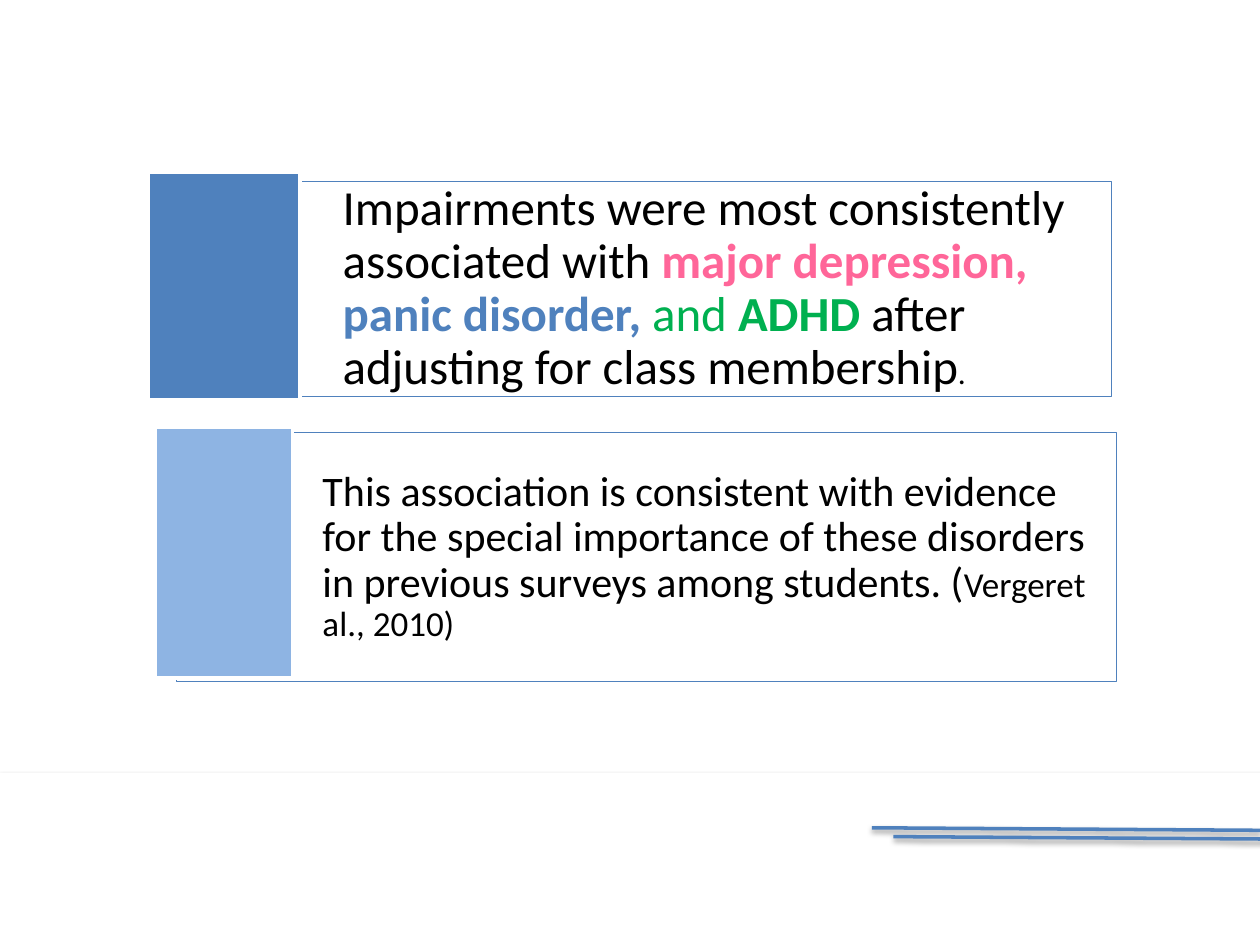
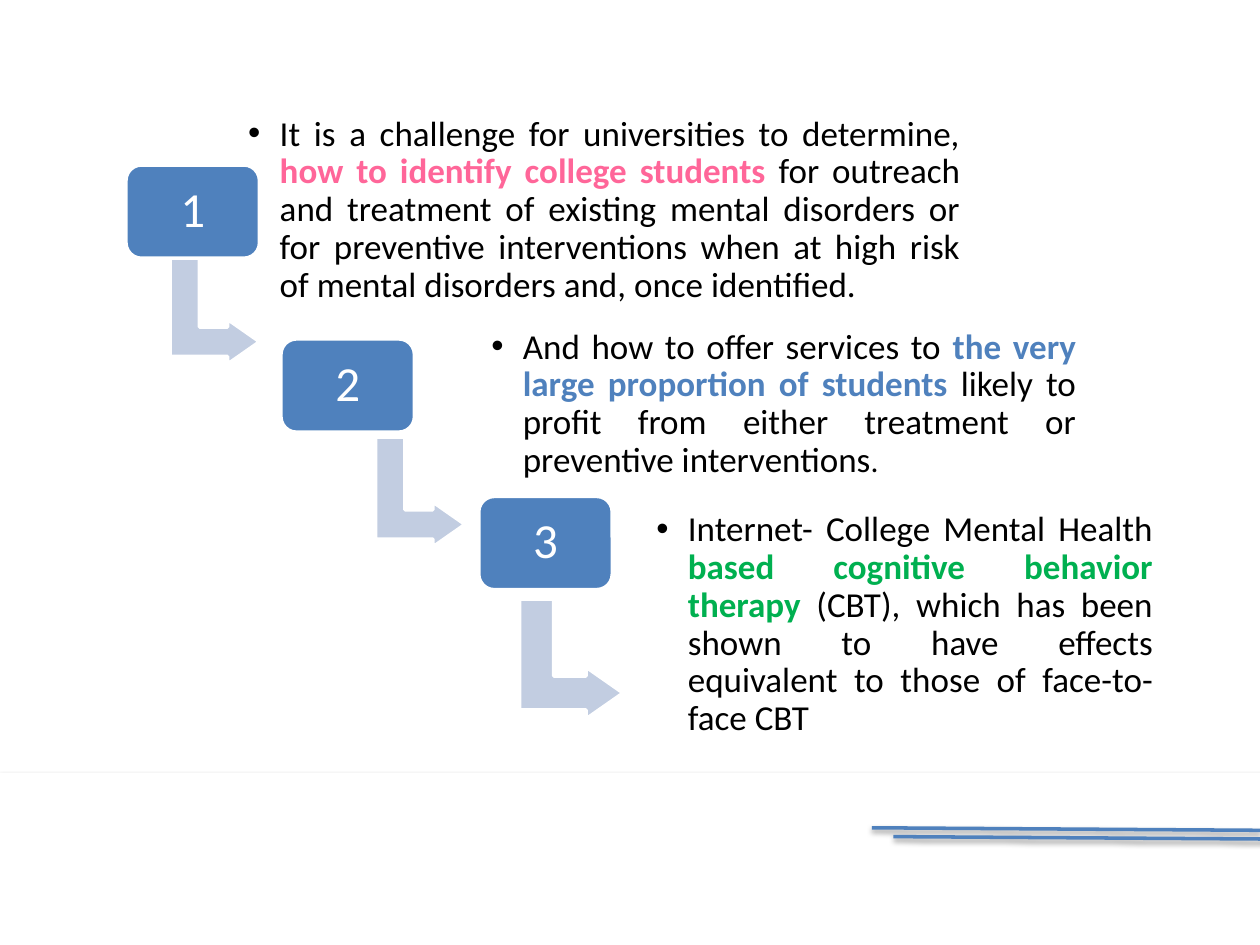
from lxml import etree
from pptx import Presentation
from pptx.dml.color import RGBColor
from pptx.enum.shapes import MSO_CONNECTOR, MSO_SHAPE
from pptx.enum.text import MSO_ANCHOR, PP_ALIGN
from pptx.oxml.ns import qn
from pptx.util import Inches, Pt

RECT, ROUND, BENT = MSO_SHAPE.RECTANGLE, MSO_SHAPE.ROUNDED_RECTANGLE, MSO_SHAPE.BENT_UP_ARROW
LINE, MIDDLE = MSO_CONNECTOR.STRAIGHT, MSO_ANCHOR.MIDDLE
LEFT, CENTER, JUSTIFY = PP_ALIGN.LEFT, PP_ALIGN.CENTER, PP_ALIGN.JUSTIFY

THEME = dict(
    font="Calibri", white="FFFFFF", black="000000", blue="4F81BD", sky="8EB4E3",
    pale="C2CDE1", pink="FF6699", green="00B050",
    large=28, medium=24, body=20, small=18, edge=2, hairline=0.75,
)

prs = Presentation()
prs.slide_width, prs.slide_height = Inches(10), Inches(7.5)
COL, ROW = prs.slide_width / 100, prs.slide_height / 75


def add_block(s, kind, box, fill, line="white", width="edge"):
    x, y, w, h = box
    sp = s.shapes.add_shape(kind, int(x * COL), int(y * ROW), int(w * COL), int(h * ROW))
    sp.shadow.inherit = False
    sp.fill.solid()
    sp.fill.fore_color.rgb = RGBColor.from_string(THEME[fill])
    sp.line.color.rgb = RGBColor.from_string(THEME[line])
    sp.line.width = Pt(THEME[width])
    return sp


def write(sp, runs, align, inset, left=None):
    tf = sp.text_frame
    margins = dict.fromkeys(("margin_left", "margin_top", "margin_right", "margin_bottom"), Inches(inset))
    if left:
        margins["margin_left"] = Inches(left)
    for name, value in {**margins, "word_wrap": True, "vertical_anchor": MIDDLE}.items():
        setattr(tf, name, value)
    p = tf.paragraphs[0]
    p.alignment, p.line_spacing = align, 0.9
    for text, size, color, bold in runs:
        r = p.add_run()
        r.text = text
        for name, value in dict(name=THEME["font"], size=Pt(THEME[size]), bold=bold).items():
            setattr(r.font, name, value)
        r.font.color.rgb = RGBColor.from_string(THEME[color])
    return p


slides = [prs.slides.add_slide(prs.slide_layouts[6]) for _ in range(2)]

for s in slides:
    footer = add_block(s, RECT, (0, 61.4, 100, 13.6), "white", width="hairline")
    decorations = [(footer, 35, 1.8)]
    for x, y in ((69.2, 65.7), (70.9, 66.4)):
        rule = s.shapes.add_connector(LINE, int(x * COL), int(y * ROW), int((x + 30.8) * COL), int((y + 0.2) * ROW))
        rule.line.color.rgb = RGBColor.from_string(THEME["blue"])
        rule.line.width = Pt(THEME["edge"])
        etree.SubElement(rule._element.spPr, qn("a:effectLst"))
        decorations.append((rule, 38, 1.6))
    for sp, opacity, distance in decorations:
        effects = sp._element.spPr.find(qn("a:effectLst"))
        shadow = etree.SubElement(effects, qn("a:outerShdw"), blurRad=str(Pt(3.1)),
                                  dist=str(Pt(distance)), dir="5400000", rotWithShape="0")
        color = etree.SubElement(shadow, qn("a:srgbClr"), val=THEME["black"])
        etree.SubElement(color, qn("a:alpha"), val=str(opacity * 1000))

findings = [
    ((15.6, 14.4, 72.6, 17.1), (11.8, 13.7, 12, 18), "blue", 0.12, [
        ("Impairments were most consistently associated with ", "large", "black", False),
        ("major depression, ", "large", "pink", True),
        ("panic disorder, ", "large", "blue", True),
        ("and ", "large", "green", False),
        ("ADHD ", "large", "green", True),
        ("after adjusting for class membership", "large", "black", False),
        (".", "small", "black", False),
    ]),
    ((14, 34.3, 74.6, 19.8), (12.3, 33.9, 10.9, 19.9), "sky", 0.1, [
        ("This association is consistent with evidence for the special importance of these "
         "disorders in previous surveys among students. (", "medium", "black", False),
        ("Vergeret al., 2010)", "body", "black", False),
    ]),
]
for card_box, tab_box, tab_color, inset, runs in findings:
    card = add_block(slides[0], RECT, card_box, "white", "blue", "hairline")
    write(card, runs, LEFT, inset, left=1.16)
    add_block(slides[0], RECT, tab_box, tab_color)

steps = [
    ((10, 13.1), (12.7, 21, 8.7, 7.1), (18.9, 9.8, 58.1, 13.8), [
        ("It is a challenge for universities to determine, ", "body", "black", False),
        ("how to identify college students ", "body", "pink", True),
        ("for outreach and treatment of existing mental disorders or for preventive "
         "interventions when at high risk of mental disorders and, once identified. ", "body", "black", False),
    ]),
    ((22.3, 26.9), (29, 35.5, 8.7, 7.1), (38.2, 26.4, 48, 11.4), [
        ("And how to offer services to ", "body", "black", False),
        ("the very large proportion of students ", "body", "blue", True),
        ("likely to profit from either treatment or preventive interventions", "body", "black", False),
        (". ", "small", "black", False),
    ]),
    ((38, 39.4), (40.6, 48.2, 9.5, 8.2), (51.3, 41.6, 41, 16), [
        ("Internet- College Mental Health ", "body", "black", False),
        ("based cognitive behavior therapy ", "body", "green", True),
        ("(CBT), which has been shown to have effects equivalent to those of "
         "face-to-face CBT", "body", "black", False),
    ]),
]
s = slides[1]
for number, (corner, arrow_box, text_box, runs) in enumerate(steps, 1):
    arrow = add_block(s, BENT, arrow_box, "pale")
    arrow.rotation = 90
    for i, value in enumerate((0.328, 0.25, 0.358)):
        arrow.adjustments[i] = value

    badge = add_block(s, ROUND, (*corner, 10.6, 7.4), "blue")
    write(badge, [(str(number), "large", "white", False)], CENTER, 0.12)

    x, y, w, h = text_box
    tb = s.shapes.add_textbox(int(x * COL), int(y * ROW), int(w * COL), int(h * ROW))
    pPr = write(tb, runs, JUSTIFY, 0.08)._p.get_or_add_pPr()
    pPr.set("marL", str(Inches(0.25)))
    pPr.set("indent", str(-Inches(0.25)))
    etree.SubElement(pPr, qn("a:buFont"), typeface="Arial")
    etree.SubElement(pPr, qn("a:buChar"), char="•")

prs.save("out.pptx")
